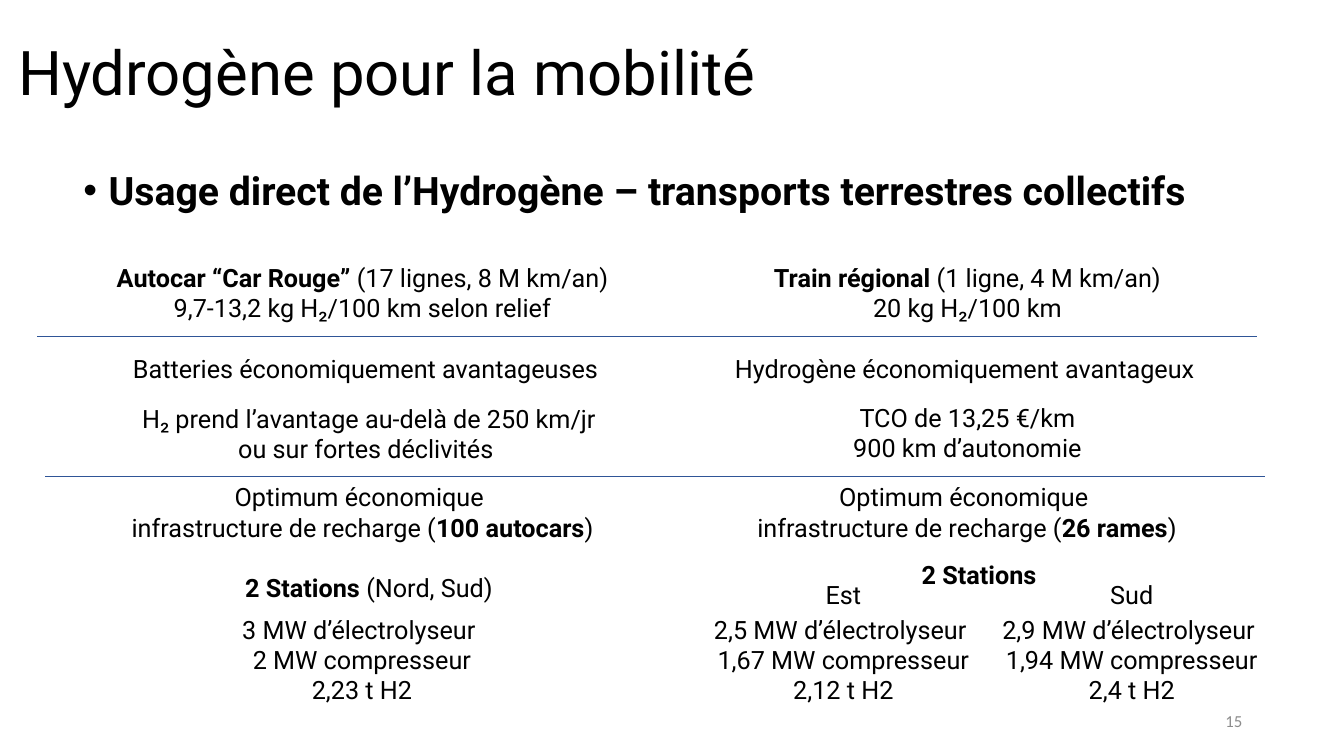
from lxml import etree
from pptx import Presentation
from pptx.dml.color import RGBColor
from pptx.enum.shapes import MSO_CONNECTOR
from pptx.enum.text import MSO_ANCHOR as ANCHOR, MSO_AUTO_SIZE as AUTO, PP_ALIGN as ALIGN
from pptx.oxml.ns import qn
from pptx.util import Inches, Pt

BLACK = RGBColor(0x00, 0x00, 0x00)
GREY = RGBColor(0x8C, 0x8C, 0x8C)
BLUE = RGBColor(0x2F, 0x55, 0x97)
ONE_LINE, TWO_LINES, THREE_LINES = 0.4, 0.71, 1.01


def add_run(p, text, size=18, bold=False, font="Roboto", color=BLACK):
    r = p.add_run()
    r.text = text
    r.font.name, r.font.size, r.font.bold = font, Pt(size), bold
    r.font.color.rgb = color


def add_text(slide, box, lines, align=ALIGN.CENTER, wrap=True):
    """Each line is a list of runs; a run is a string, or (string,) for bold."""
    tf = slide.shapes.add_textbox(*map(Inches, box)).text_frame
    tf.word_wrap = wrap
    for i, runs in enumerate(lines):
        p = tf.paragraphs[0] if i == 0 else tf.add_paragraph()
        p.alignment = align
        for run in runs:
            bold = isinstance(run, tuple)
            add_run(p, run[0] if bold else run, bold=bold)


def add_title(slide, box, text):
    title = slide.shapes.title
    title.left, title.top, title.width, title.height = map(Inches, box)
    tf = title.text_frame
    tf.auto_size = AUTO.NONE
    tf.vertical_anchor = ANCHOR.MIDDLE
    p = tf.paragraphs[0]
    p.alignment, p.line_spacing = ALIGN.LEFT, 0.9
    add_run(p, text, 44)


def add_heading(slide, box, text):
    tf = slide.shapes.add_textbox(*map(Inches, box)).text_frame
    tf.word_wrap = True
    p = tf.paragraphs[0]
    p.line_spacing, p.space_before = 0.9, Pt(10)
    add_run(p, text, 28, bold=True)
    pPr = p._p.get_or_add_pPr()
    pPr.set("marL", str(Inches(0.25)))
    pPr.set("indent", str(-Inches(0.25)))
    etree.SubElement(pPr, qn("a:buFont")).set("typeface", "Arial")
    etree.SubElement(pPr, qn("a:buChar")).set("char", "•")


def add_page_number(slide, box, number):
    tf = slide.shapes.add_textbox(*map(Inches, box)).text_frame
    tf.word_wrap = True
    tf.vertical_anchor = ANCHOR.MIDDLE
    p = tf.paragraphs[0]
    p.alignment = ALIGN.RIGHT
    add_run(p, number, 12, font="Calibri", color=GREY)


def add_rule(slide, x, y, width):
    line = slide.shapes.add_connector(
        MSO_CONNECTOR.STRAIGHT, Inches(x), Inches(y), Inches(x + width), Inches(y))
    line.line.color.rgb = BLUE
    line.line.width = Pt(0.5)
    etree.SubElement(line._element.spPr, qn("a:effectLst"))


def add_optimum(slide, x, y, width, fleet):
    add_text(slide, (x, y, width, TWO_LINES),
             [["Optimum économique "], ["infrastructure de recharge (", (fleet,), ")"]])


def add_station(slide, x, y, width, electrolyser, compressor, storage):
    add_text(slide, (x, y, width, THREE_LINES),
             [[f"{electrolyser} MW d’électrolyseur "],
              [f"{compressor} MW compresseur"],
              [f"{storage} t H2"]])


def add_coach_column(slide, x, y):
    add_text(slide, (x, y, 5.15, TWO_LINES),
             [[("Autocar “Car Rouge”",),
               " (17 lignes, 8 M km/an) 9,7-13,2 kg H₂/100 km selon relief"]])
    add_text(slide, (x + 0.2, y + 0.91, 4.85, ONE_LINE),
             [["Batteries économiquement avantageuses"]], ALIGN.LEFT, wrap=False)
    add_text(slide, (x + 0.26, y + 1.4, 4.76, TWO_LINES),
             [["H₂ prend l’avantage au-delà de 250 km/jr ou sur fortes déclivités "]])
    add_optimum(slide, x + 0.09, y + 2.18, 4.97, "100 autocars")
    add_text(slide, (x + 1.05, y + 3.08, 3.18, ONE_LINE),
             [[("2 Stations",), " (Nord, Sud)"]])
    add_station(slide, x + 0.98, y + 3.49, 3.18, "3", "2", "2,23")


def add_train_column(slide, x, y):
    add_text(slide, (x + 0.57, y, 4.09, TWO_LINES),
             [[("Train régional ",), "(1 ligne, 4 M km/an)"], ["20 kg H₂/100 km"]],
             wrap=False)
    add_text(slide, (x + 0.21, y + 0.91, 4.8, ONE_LINE),
             [["Hydrogène économiquement avantageux"]], ALIGN.LEFT, wrap=False)
    add_text(slide, (x + 1.37, y + 1.39, 2.49, TWO_LINES),
             [["TCO de 13,25 €/km"], ["900 km d’autonomie"]], wrap=False)
    add_optimum(slide, x + 0.34, y + 2.18, 4.54, "26 rames")
    add_text(slide, (x + 1.14, y + 2.95, 3.18, ONE_LINE), [[("2 Stations",)]])
    stations = [("Est", "2,5", "1,67", "2,12"), ("Sud", "2,9", "1,94", "2,4")]
    for i, (name, *values) in enumerate(stations):
        left = x + i * 2.86
        add_text(slide, (left + 1.06, y + 3.145, 0.65, ONE_LINE), [[name]])
        add_station(slide, left, y + 3.49, 2.77, *values)


def main():
    prs = Presentation()
    prs.slide_width, prs.slide_height = Inches(13.33), Inches(7.5)
    slide = prs.slides.add_slide(prs.slide_layouts[5])
    add_title(slide, (0.08, 0.02, 11.5, 1.45), "Hydrogène pour la mobilité")
    add_heading(slide, (0.73, 1.65, 11.5, 0.71),
                "Usage direct de l’Hydrogène – transports terrestres collectifs")
    add_coach_column(slide, 1.02, 2.55)
    add_train_column(slide, 6.98, 2.55)
    add_rule(slide, 0.37, 3.34, 12.1)
    add_rule(slide, 0.45, 4.73, 12.1)
    add_page_number(slide, (9.42, 6.95, 3, 0.4), "15")
    prs.save("out.pptx")


if __name__ == "__main__":
    main()
